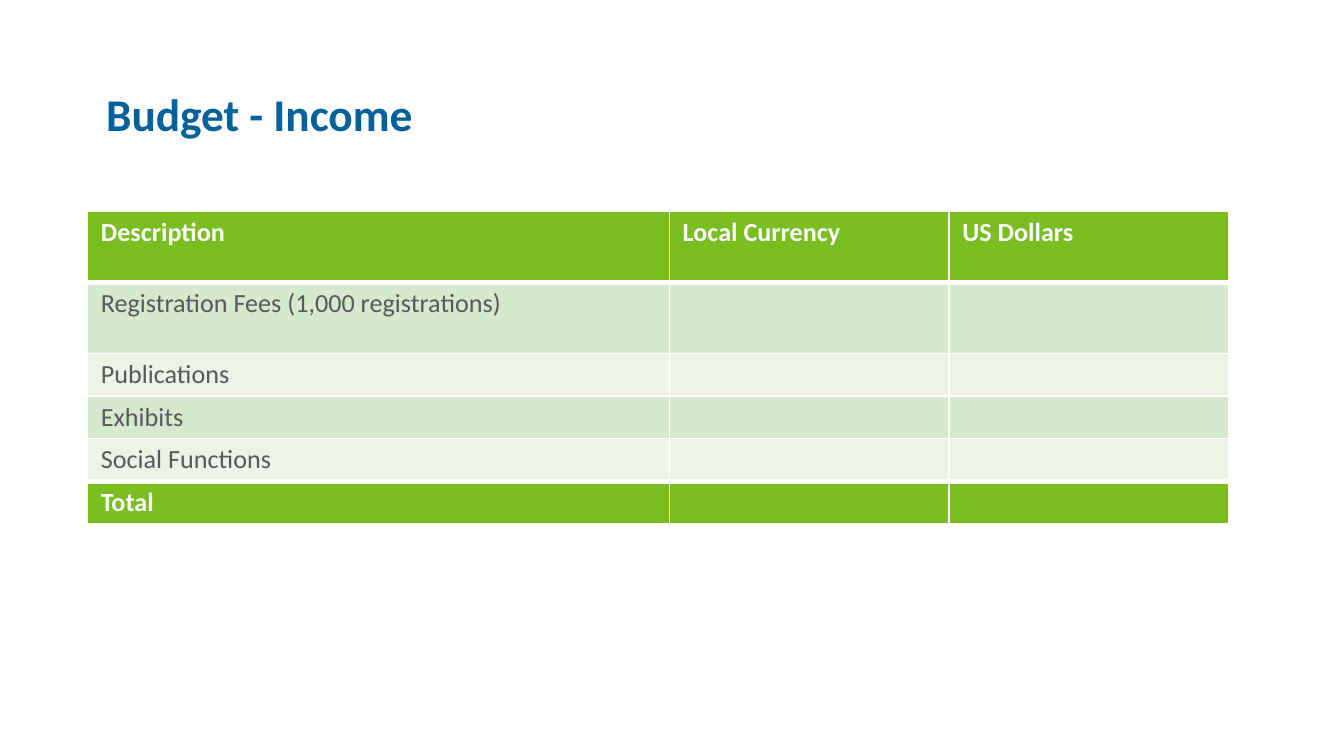
from lxml.etree import SubElement
from pptx import Presentation
from pptx.dml.color import RGBColor as RGB
from pptx.enum.text import MSO_ANCHOR as Anchor, PP_ALIGN as Align
from pptx.oxml import parse_xml
from pptx.oxml.ns import nsdecls, qn
from pptx.util import Inches, Pt

WHITE, GREEN, BLUE, GRAY = "FFFFFF", "78BE20", "00619B", "58595B"
BANDS = ["D6E8CD", "ECF4E8"]
COLS = [4.33, 2.08, 2.08]
TALL, LOW = 0.53, 0.3
ROWS = [
    ["Description", "Local Currency", "US Dollars"],
    ["Registration Fees (1,000 registrations)", "", ""],
    ["Publications", "", ""],
    ["Exhibits", "", ""],
    ["Social Functions", "", ""],
    ["Total", "", ""],
]


def color(code):
    """Turn a hex string into a colour."""
    return RGB.from_string(code)


def style(font, size, code, bold):
    """Format a font."""
    form = {"name": "Calibri", "size": Pt(size), "bold": bold}
    for key, val in form.items():
        setattr(font, key, val)
    font.color.rgb = color(code)


def add_title(slide, text):
    """Fill and place the title."""
    title = slide.shapes.title
    box = {"left": 0.69, "top": 0.64, "width": 4.88, "height": 0.46}
    for key, val in box.items():
        setattr(title, key, Inches(val))
    frame = title.text_frame
    frame.text = text
    frame.word_wrap = True
    frame.vertical_anchor = Anchor.MIDDLE
    para = frame.paragraphs[0]
    para.alignment = Align.LEFT
    para.line_spacing = 0.9
    style(para.runs[0].font, 24.3, BLUE, True)


def add_edges(cell, top, base):
    """Draw the white borders of a cell."""
    props = cell._tc.get_or_add_tcPr()
    sides = {"L": 1, "R": 1, "T": top, "B": base}
    for spot, (side, width) in enumerate(sides.items()):
        line = parse_xml(
            f'<a:ln{side} {nsdecls("a")} w="{Pt(width)}"><a:solidFill>'
            f'<a:srgbClr val="{WHITE}"/></a:solidFill></a:ln{side}>'
        )
        props.insert(spot, line)


def fill_cell(cell, text, back, ink, bold):
    """Set the text and fill of a cell."""
    cell.fill.solid()
    cell.fill.fore_color.rgb = color(back)
    pads = {"left": 0.1, "right": 0.1, "top": 0.04, "bottom": 0.04}
    for side, val in pads.items():
        setattr(cell, f"margin_{side}", Inches(val))
    para = cell.text_frame.paragraphs[0]
    if text:
        run = para.add_run()
        run.text = text
        style(run.font, 14, ink, bold)
    else:
        SubElement(para._p, qn("a:endParaRPr"), sz="1400")


def add_grid(slide, rows):
    """Build the income table."""
    last = len(rows) - 1
    highs = [TALL, TALL] + [LOW] * (last - 1)
    box = [Inches(n) for n in (0.65, 1.57, sum(COLS), sum(highs))]
    grid = slide.shapes.add_table(len(rows), len(COLS), *box).table
    grid.first_row = grid.horz_banding = False
    for col, wide in zip(grid.columns, COLS):
        col.width = Inches(wide)
    for num, (row, high) in enumerate(zip(grid.rows, highs)):
        row.height = Inches(high)
        main_row = num in (0, last)
        back = GREEN if main_row else BANDS[(num - 1) % 2]
        ink = WHITE if main_row else GRAY
        top = 3 if num in (1, last) else 1
        base = 3 if num in (0, last - 1) else 1
        for cell, text in zip(row.cells, rows[num]):
            fill_cell(cell, text, back, ink, main_row)
            add_edges(cell, top, base)


def main():
    """Build and save the slide."""
    deck = Presentation()
    deck.slide_width = Inches(10)
    deck.slide_height = Inches(10 * 9 / 16)
    slide = deck.slides.add_slide(deck.slide_layouts[5])
    add_title(slide, "Budget - Income")
    add_grid(slide, ROWS)
    deck.save("out.pptx")


if __name__ == "__main__":
    main()
